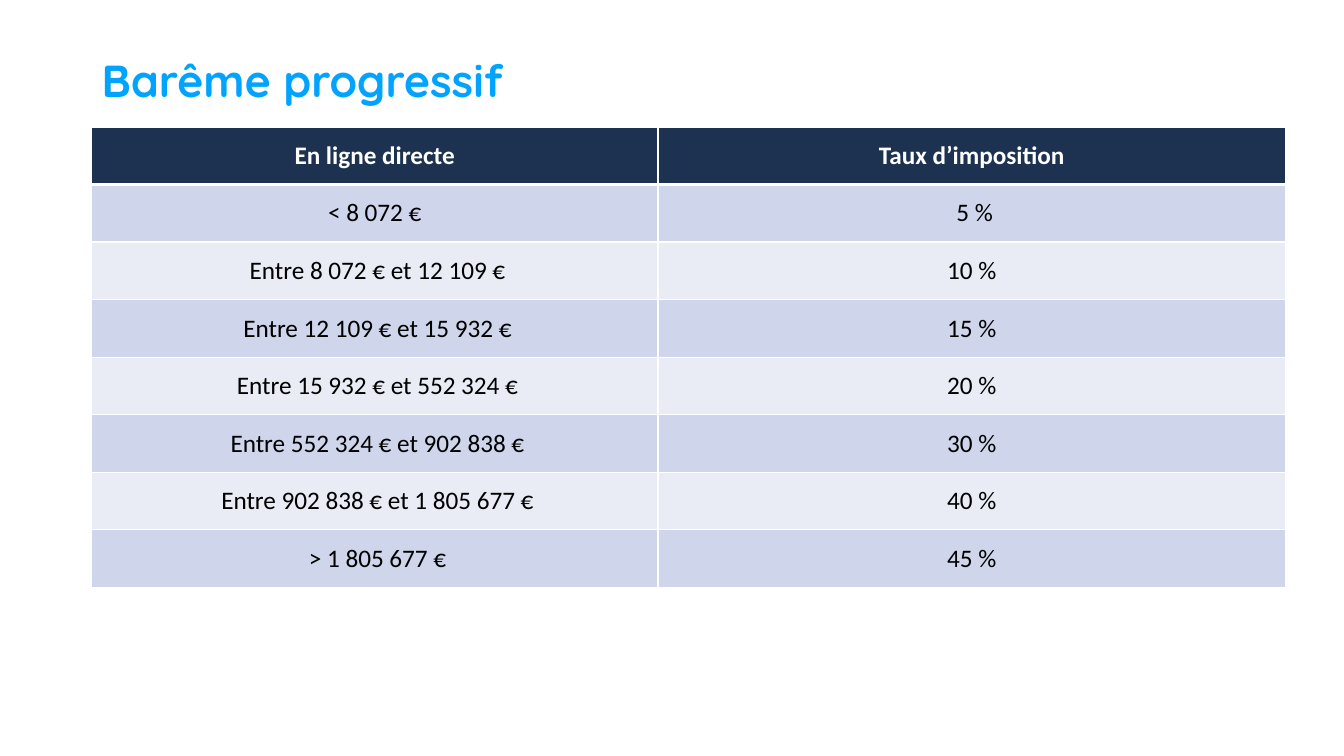
import pptx
import pptx.dml.color
import pptx.enum.text
import pptx.oxml
import pptx.oxml.ns
import pptx.util

Cm = pptx.util.Cm
Pt = pptx.util.Pt
RGBColor = pptx.dml.color.RGBColor
PP_ALIGN = pptx.enum.text.PP_ALIGN
MSO_ANCHOR = pptx.enum.text.MSO_ANCHOR

SKY = RGBColor(0x00, 0xA4, 0xFF)
NAVY = RGBColor(0x1C, 0x32, 0x50)
BAND_DARK = RGBColor(0xCF, 0xD5, 0xEA)
BAND_LIGHT = RGBColor(0xE9, 0xEB, 0xF5)
WHITE = RGBColor(0xFF, 0xFF, 0xFF)
BLACK = RGBColor(0x00, 0x00, 0x00)

TAX_BANDS = [
    (" En ligne directe ", " Taux d’imposition "),
    ("< 8 072 €", " 5 %"),
    (" Entre 8 072 € et 12 109 €", "10 %"),
    (" Entre 12 109 € et 15 932 €", "15 %"),
    (" Entre 15 932 € et 552 324 €", "20 %"),
    (" Entre 552 324 € et 902 838 €", "30 %"),
    (" Entre 902 838 € et 1 805 677 €", "40 %"),
    (" > 1 805 677 €", "45 %"),
]


class Deck:
    title_font = "Quicksand"
    body_font = "Calibri"

    def __init__(self):
        self.prs = pptx.Presentation()
        self.prs.slide_width = Cm(33.87)
        self.prs.slide_height = Cm(19.05)
        self.slide = self.prs.slides.add_slide(self.prs.slide_layouts[5])

    def style(self, p, font, size, color, bold):
        for r in p.runs:
            r.font.name = font
            r.font.size = Pt(size)
            r.font.color.rgb = color
            r.font.bold = bold

    def title(self, text, left, top, width, height):
        sp = self.slide.shapes.title
        sp.left, sp.top, sp.width, sp.height = Cm(left), Cm(top), Cm(width), Cm(height)
        tf = sp.text_frame
        tf.text = text
        tf.word_wrap = True
        tf.auto_size = pptx.enum.text.MSO_AUTO_SIZE.NONE
        tf.vertical_anchor = MSO_ANCHOR.TOP
        p = tf.paragraphs[0]
        p.alignment = PP_ALIGN.LEFT
        p.line_spacing = 0.9
        p.space_before = Pt(0)
        self.style(p, self.title_font, 32, SKY, True)

    def border(self, cell, side, width):
        ln = pptx.oxml.parse_xml(
            f'<a:{side} {pptx.oxml.ns.nsdecls("a")} w="{Pt(width)}">'
            f'<a:solidFill><a:srgbClr val="{WHITE}"/></a:solidFill></a:{side}>'
        )
        cell._tc.get_or_add_tcPr().append(ln)

    def cell(self, cell, text, row):
        header = row == 0
        for side in ("lnL", "lnR", "lnT", "lnB"):
            thick = (side, row) in (("lnB", 0), ("lnT", 1))
            self.border(cell, side, 3 if thick else 1)
        cell.fill.solid()
        cell.fill.fore_color.rgb = NAVY if header else BAND_DARK if row % 2 else BAND_LIGHT
        cell.margin_left = cell.margin_right = Cm(0.13)
        cell.margin_top = cell.margin_bottom = Cm(0)
        cell.vertical_anchor = MSO_ANCHOR.MIDDLE
        cell.text_frame.text = text
        p = cell.text_frame.paragraphs[0]
        p.alignment = PP_ALIGN.CENTER
        self.style(p, self.body_font, 18, WHITE if header else BLACK, header)

    def table(self, rows, left, top, col_widths, row_height):
        frame = self.slide.shapes.add_table(
            len(rows), len(col_widths), Cm(left), Cm(top),
            Cm(sum(col_widths)), Cm(row_height * len(rows)),
        )
        table = frame.table
        for column, width in zip(table.columns, col_widths):
            column.width = Cm(width)
        for i, texts in enumerate(rows):
            table.rows[i].height = Cm(row_height)
            for j, text in enumerate(texts):
                self.cell(table.cell(i, j), text, i)


def main():
    deck = Deck()
    deck.title("Barême progressif", 2.31, 1.35, 28.5, 0.99)
    deck.table(TAX_BANDS, 2.31, 3.2, (14.27, 15.82), 1.45)
    deck.prs.save("out.pptx")


if __name__ == "__main__":
    main()
